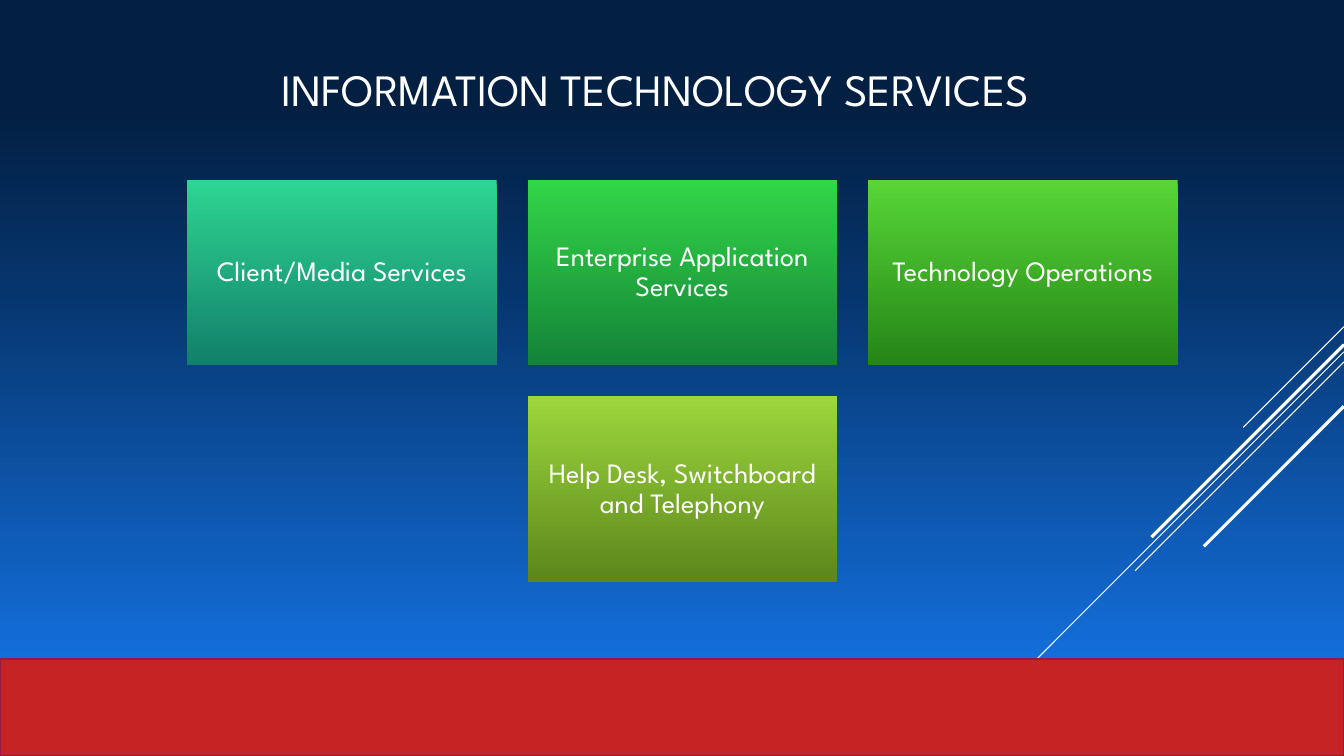
from copy import deepcopy

from lxml import etree
from pptx import Presentation
from pptx.dml.color import RGBColor
from pptx.enum import shapes, text
from pptx.oxml.ns import qn
from pptx.util import Pt

COLOURS = {
    "white": "FFFFFF",
    "band": "C62324",
    "band edge": "921A46",
    "sky low": "167BF3",
    "sky middle": "06356D",
    "sky high": "031F41",
}
FONT = "League Spartan"
WIDTH, HEIGHT = 960, 540


def write_text(shape, wording, size):
    frame = shape.text_frame
    frame.word_wrap = True
    frame.vertical_anchor = text.MSO_ANCHOR.MIDDLE
    frame.text = wording
    paragraph = frame.paragraphs[0]
    paragraph.alignment = text.PP_ALIGN.CENTER
    font = paragraph.runs[0].font
    font.name = FONT
    font.size = Pt(size)
    font.color.rgb = RGBColor.from_string(COLOURS["white"])
    return frame


def set_gradient(fill, angle, stops):
    fill.gradient_angle = angle
    for stop, (position, colour) in zip(fill.gradient_stops, stops):
        stop.position = position
        stop.color.rgb = RGBColor.from_string(colour)


presentation = Presentation()
presentation.slide_width = Pt(WIDTH)
presentation.slide_height = Pt(HEIGHT)
slide = presentation.slides.add_slide(presentation.slide_layouts[6])

# Background: three stops, bright at the bottom
background_fill = slide.background.fill
background_fill.gradient()
stop_list = slide.element.find(".//" + qn("a:gsLst"))
stop_list.append(deepcopy(stop_list[-1]))
set_gradient(background_fill, 90, [
    (0.02, COLOURS["sky low"]),
    (0.62, COLOURS["sky middle"]),
    (0.86, COLOURS["sky high"]),
])

# Diagonal lines at 45 degrees from the right edge: top, run, line width
for top, run, line_width in [
    (233.3, 72, 0.75),
    (251.3, 234.7, 0.75),
    (258.5, 149.2, 0.75),
    (246.2, 137.5, 2.25),
    (290.2, 100.1, 2.25),
]:
    diagonal = slide.shapes.add_connector(
        shapes.MSO_CONNECTOR.STRAIGHT,
        Pt(WIDTH), Pt(top), Pt(WIDTH - run), Pt(top + run))
    diagonal.line.color.rgb = RGBColor.from_string(COLOURS["white"])
    diagonal.line.width = Pt(line_width)
    etree.SubElement(diagonal.element.spPr, qn("a:effectLst"))

# Red band along the bottom
BAND_TOP = 470.5
band = slide.shapes.add_shape(
    shapes.MSO_SHAPE.RECTANGLE, 0, Pt(BAND_TOP), Pt(WIDTH), Pt(HEIGHT - BAND_TOP))
band.shadow.inherit = False
band.fill.solid()
band.fill.fore_color.rgb = RGBColor.from_string(COLOURS["band"])
band.line.color.rgb = RGBColor.from_string(COLOURS["band edge"])
band.line.width = Pt(1.25)

# Title
title = slide.shapes.add_textbox(Pt(131.8), Pt(16.6), Pt(673.2), Pt(93.6))
write_text(title, "INFORMATION TECHNOLOGY SERVICES", 32)

# Service boxes on a grid: column, row, wording, top colour, bottom colour
GRID_LEFT, GRID_TOP = 133.7, 128.4
BOX_WIDTH, BOX_HEIGHT, GAP = 221.1, 132.6, 22.1
for column, row, wording, top_colour, bottom_colour in [
    (0, 0, "Client/Media Services", "2ED592", "11806A"),
    (1, 0, "Enterprise Application Services", "32D647", "148339"),
    (2, 0, "Technology Operations", "57D637", "258517"),
    (1, 1, "Help Desk, Switchboard and Telephony", "9DD63D", "5B871B"),
]:
    box = slide.shapes.add_shape(
        shapes.MSO_SHAPE.RECTANGLE,
        Pt(GRID_LEFT + column * (BOX_WIDTH + GAP)),
        Pt(GRID_TOP + row * (BOX_HEIGHT + GAP)),
        Pt(BOX_WIDTH), Pt(BOX_HEIGHT))
    box.shadow.inherit = False
    box.line.fill.background()
    box.fill.gradient()
    set_gradient(box.fill, 270, [(0, top_colour), (1, bottom_colour)])
    frame = write_text(box, wording, 20)
    frame.margin_left = frame.margin_right = Pt(6)
    frame.margin_top = frame.margin_bottom = Pt(6)
    frame.paragraphs[0].line_spacing = 0.9

presentation.save("out.pptx")
